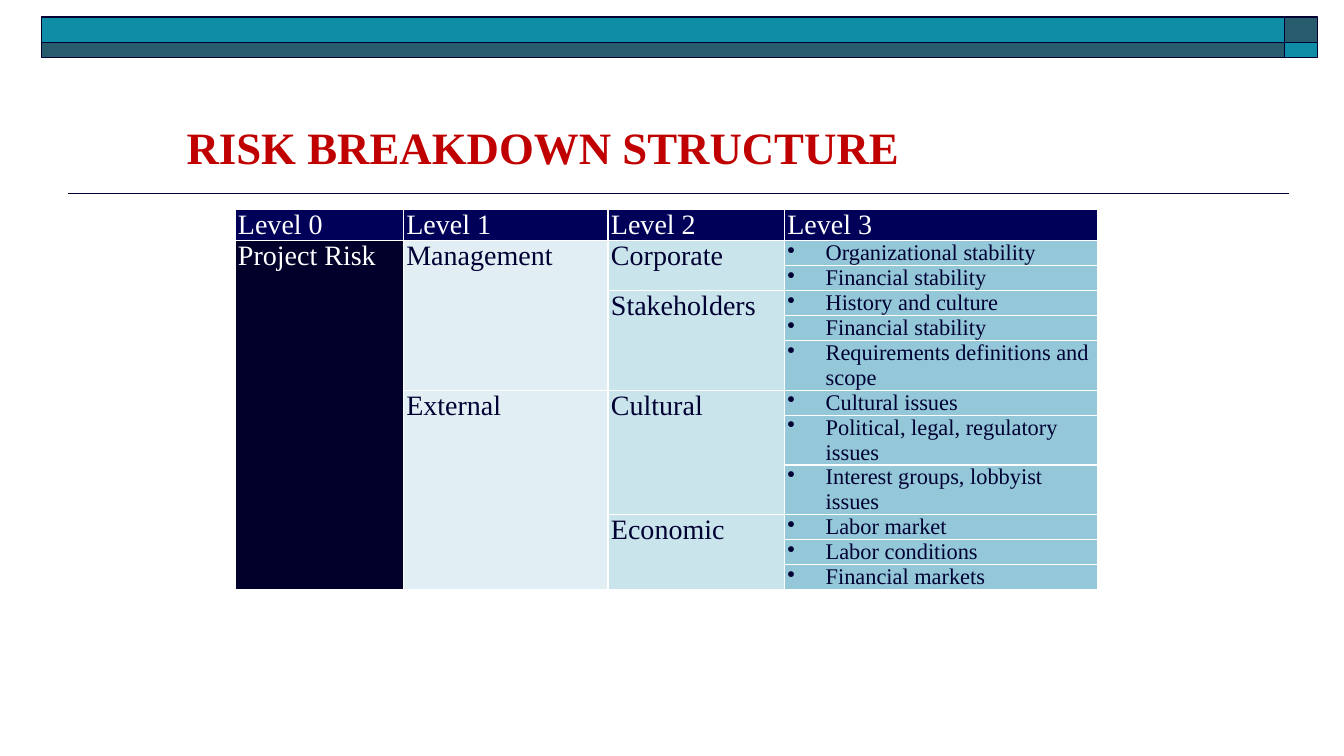
"""Build the risk breakdown structure slide."""
from dataclasses import dataclass

from lxml import etree
from pptx import Presentation
from pptx.dml.color import RGBColor
from pptx.enum.shapes import MSO_CONNECTOR, MSO_SHAPE
from pptx.enum.text import MSO_ANCHOR, MSO_AUTO_SIZE, PP_ALIGN
from pptx.oxml.ns import qn
from pptx.slide import Slide
from pptx.table import Table, _Cell
from pptx.text.text import TextFrame
from pptx.util import Inches, Pt

RECTANGLE = MSO_SHAPE.RECTANGLE
STRAIGHT = MSO_CONNECTOR.STRAIGHT
TOP = MSO_ANCHOR.TOP
LEFT = PP_ALIGN.LEFT
NO_AUTOFIT = MSO_AUTO_SIZE.NONE

FONT = "Times New Roman"
COLORS = {
    "ink": "000033",
    "teal": "108DA6",
    "slate": "275C6D",
    "title": "C00000",
    "white": "FFFFFF",
    "header": "000059",
    "project": "00002A",
    "area": "E1EEF3",
    "category": "CAE4EC",
    "risk": "94C8D9",
}
HEADER_HEIGHT = 0.3
LINE_HEIGHT = 0.24
RISK_LINE_CHARS = 28


@dataclass(frozen=True)
class BannerBlock:
    left: float
    top: float
    width: float
    height: float
    color: str


@dataclass(frozen=True)
class Level:
    heading: str
    width: float
    fill: str
    color: str = "ink"
    size: int = 20
    bullet: str = ""


@dataclass(frozen=True)
class Risk:
    name: str
    subrisks: tuple["Risk", ...] = ()

    def leaves(self) -> list["Risk"]:
        if not self.subrisks:
            return [self]
        return [leaf for subrisk in self.subrisks for leaf in subrisk.leaves()]


BANNER = (
    BannerBlock(12.74, 0.17, 0.33, 0.25, "slate"),
    BannerBlock(0.41, 0.17, 12.33, 0.25, "teal"),
    BannerBlock(0.41, 0.42, 12.33, 0.15, "slate"),
    BannerBlock(12.74, 0.42, 0.33, 0.15, "teal"),
)
LEVELS = (
    Level("Level 0", 1.67, "project", color="white"),
    Level("Level 1", 2.03, "area"),
    Level("Level 2", 1.75, "category"),
    Level("Level 3", 3.11, "risk", size=16, bullet="•"),
)
PROJECT = Risk("Project Risk", (
    Risk("Management", (
        Risk("Corporate", (
            Risk("Organizational stability"),
            Risk("Financial stability"),
        )),
        Risk("Stakeholders", (
            Risk("History and culture"),
            Risk("Financial stability"),
            Risk("Requirements definitions and scope"),
        )),
    )),
    Risk("External", (
        Risk("Cultural", (
            Risk("Cultural issues"),
            Risk("Political, legal, regulatory issues"),
            Risk("Interest groups, lobbyist issues"),
        )),
        Risk("Economic", (
            Risk("Labor market"),
            Risk("Labor conditions"),
            Risk("Financial markets"),
        )),
    )),
))


def rgb(name: str) -> RGBColor:
    return RGBColor.from_string(COLORS[name])


def write(frame: TextFrame, text: str, *, size: int, color: str,
          bold: bool = False, bullet: str = "") -> None:
    paragraph = frame.paragraphs[0]
    paragraph.alignment = LEFT
    run = paragraph.add_run()
    run.text = text
    run.font.name = FONT
    run.font.size = Pt(size)
    run.font.bold = bold
    run.font.color.rgb = rgb(color)
    if bullet:
        properties = paragraph._p.get_or_add_pPr()
        properties.set("marL", str(Inches(0.38)))
        properties.set("indent", str(-Inches(0.38)))
        etree.SubElement(properties, qn("a:buChar"), char=bullet)


def style_cell(cell: _Cell, fill: str) -> None:
    cell.margin_left = cell.margin_right = Inches(0.03)
    cell.margin_top = cell.margin_bottom = 0
    cell.fill.solid()
    cell.fill.fore_color.rgb = rgb(fill)
    properties = cell._tc.get_or_add_tcPr()
    for position, side in enumerate(("lnL", "lnR", "lnT", "lnB")):
        border = etree.Element(qn(f"a:{side}"), w=str(Pt(1)))
        paint = etree.SubElement(border, qn("a:solidFill"))
        etree.SubElement(paint, qn("a:srgbClr"), val=COLORS["white"])
        properties.insert(position, border)


def draw_banner(slide: Slide) -> None:
    rule = slide.shapes.add_connector(
        STRAIGHT, Inches(12.78), Inches(1.92), Inches(0.67), Inches(1.92))
    rule.line.color.rgb = rgb("ink")
    rule.line.width = Pt(1)
    etree.SubElement(rule._element.spPr, qn("a:effectLst"))
    for block in BANNER:
        bar = slide.shapes.add_shape(
            RECTANGLE, Inches(block.left), Inches(block.top),
            Inches(block.width), Inches(block.height))
        bar.shadow.inherit = False
        bar.fill.solid()
        bar.fill.fore_color.rgb = rgb(block.color)
        bar.line.color.rgb = rgb("ink")
        bar.line.width = Pt(1)


def draw_title(slide: Slide) -> None:
    title = slide.shapes.title
    title.left, title.top = Inches(1.75), Inches(1.08)
    title.width, title.height = Inches(7.43), Inches(0.51)
    frame = title.text_frame
    frame.auto_size = NO_AUTOFIT
    frame.vertical_anchor = TOP
    frame.margin_top, frame.margin_bottom = Inches(0.11), 0
    write(frame, "RISK BREAKDOWN STRUCTURE", size=32, color="title", bold=True)


def fill_branch(table: Table, risk: Risk, row: int, depth: int) -> None:
    level = LEVELS[depth]
    span = len(risk.leaves())
    cell = table.cell(row, depth)
    if span > 1:
        cell.merge(table.cell(row + span - 1, depth))
    write(cell.text_frame, risk.name, size=level.size, color=level.color,
          bullet=level.bullet)
    for subrisk in risk.subrisks:
        fill_branch(table, subrisk, row, depth + 1)
        row += len(subrisk.leaves())


def draw_breakdown(slide: Slide) -> None:
    risks = PROJECT.leaves()
    heights = [HEADER_HEIGHT] + [
        LINE_HEIGHT * (2 if len(risk.name) > RISK_LINE_CHARS else 1)
        for risk in risks]
    table = slide.shapes.add_table(
        len(heights), len(LEVELS), Inches(2.33), Inches(2.08),
        Inches(sum(level.width for level in LEVELS)),
        Inches(sum(heights))).table
    for row, height in zip(table.rows, heights):
        row.height = Inches(height)
    for column, level in enumerate(LEVELS):
        table.columns[column].width = Inches(level.width)
        for row in range(len(heights)):
            style_cell(table.cell(row, column), level.fill if row else "header")
        write(table.cell(0, column).text_frame, level.heading,
              size=20, color="white")
    fill_branch(table, PROJECT, 1, 0)


def main() -> None:
    deck = Presentation()
    deck.slide_width, deck.slide_height = Inches(13.33), Inches(7.5)
    slide = deck.slides.add_slide(deck.slide_layouts[5])
    draw_banner(slide)
    draw_title(slide)
    draw_breakdown(slide)
    deck.save("out.pptx")


if __name__ == "__main__":
    main()
